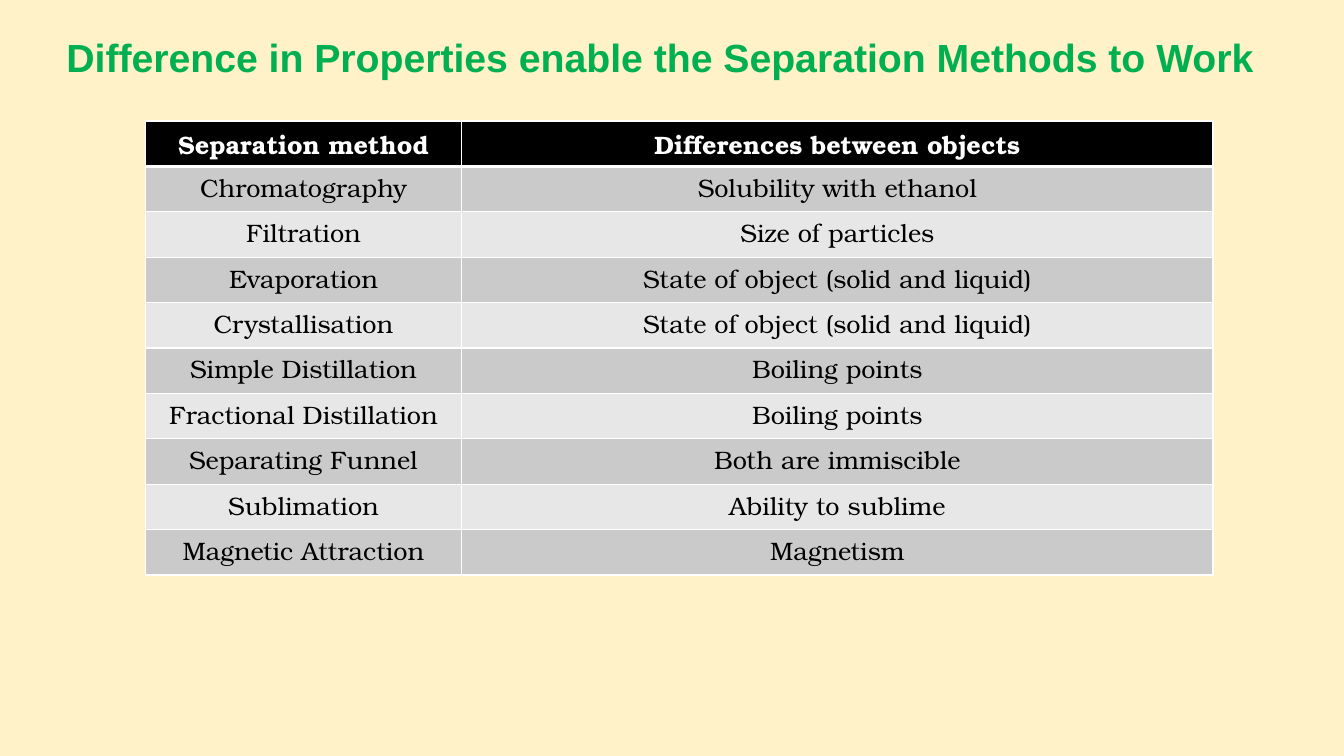
from dataclasses import dataclass

from lxml import etree
from pptx import Presentation
from pptx import util as u
from pptx.dml.color import RGBColor
from pptx.enum import text
from pptx.oxml import ns

SLIDE_WIDTH, SLIDE_HEIGHT = u.Inches(13.33), u.Inches(7.5)
CREAM, GREEN, BLACK, WHITE = "FFF1C8", "00B050", "000000", "FFFFFF"
BANDS = ("CACACA", "E7E7E7")
HEADINGS = ("Separation method", "Differences between objects")
COLUMN_SHARES = (0.2356, 0.5589)
ROW_SHARE = 0.0601


@dataclass(frozen=True)
class Separation:
    method: str
    difference: str


@dataclass(frozen=True)
class Style:
    font: str
    size: float
    color: str
    bold: bool = False


SEPARATIONS = (
    Separation("Chromatography", "Solubility with ethanol"),
    Separation("Filtration", "Size of particles"),
    Separation("Evaporation", "State of object (solid and liquid)"),
    Separation("Crystallisation", "State of object (solid and liquid)"),
    Separation("Simple Distillation", "Boiling points"),
    Separation("Fractional Distillation", "Boiling points"),
    Separation("Separating Funnel", "Both are immiscible"),
    Separation("Sublimation", "Ability to sublime"),
    Separation("Magnetic Attraction", "Magnetism"),
)
TITLE = Style("Arial", 28, GREEN, True)
HEADING = Style("TeX Gyre Bonum", 18, WHITE, True)
BODY = Style("TeX Gyre Bonum", 18, BLACK)


def color(value: str) -> RGBColor:
    return RGBColor.from_string(value)


def across(share: float) -> int:
    return round(SLIDE_WIDTH * share)


def down(share: float) -> int:
    return round(SLIDE_HEIGHT * share)


def write(frame, words: str, style: Style) -> None:
    para = frame.paragraphs[0]
    para.text = words
    para.alignment = text.PP_ALIGN.CENTER
    para.font.name = style.font
    para.font.size = u.Pt(style.size)
    para.font.bold = style.bold
    para.font.color.rgb = color(style.color)


def draw_border(cell, side: str, points: float) -> None:
    properties = cell._tc.get_or_add_tcPr()
    line = etree.Element(ns.qn(f"a:{side}"), w=str(u.Pt(points)))
    fill = etree.SubElement(line, ns.qn("a:solidFill"))
    etree.SubElement(fill, ns.qn("a:srgbClr"), val=WHITE)
    properties.append(line)


def draw_cell(cell, words: str, row: int) -> None:
    cell.margin_left = cell.margin_right = cell.margin_bottom = 0
    cell.margin_top = u.Inches(0.04)
    write(cell.text_frame, words, BODY if row else HEADING)
    cell.text_frame.paragraphs[0].space_before = u.Pt(3)
    draw_border(cell, "lnL", 1)
    draw_border(cell, "lnR", 1)
    draw_border(cell, "lnT", 3 if row == 1 else 1)
    draw_border(cell, "lnB", 1 if row else 3)
    cell.fill.solid()
    cell.fill.fore_color.rgb = color(BANDS[(row - 1) % 2] if row else BLACK)


def draw_table(page) -> None:
    rows = [HEADINGS] + [(item.method, item.difference) for item in SEPARATIONS]
    table = page.shapes.add_table(
        len(rows), len(HEADINGS), across(0.108), down(0.16),
        across(sum(COLUMN_SHARES)), down(ROW_SHARE * len(rows)),
    ).table
    for column, share in zip(table.columns, COLUMN_SHARES):
        column.width = across(share)
    for index, words in enumerate(rows):
        table.rows[index].height = down(ROW_SHARE)
        for column, entry in enumerate(words):
            draw_cell(table.cell(index, column), entry, index)


def draw_title(page) -> None:
    box = page.shapes.add_textbox(
        across(0.0338), down(0.0373), across(0.9145), down(0.076))
    box.text_frame.word_wrap = True
    box.text_frame.auto_size = text.MSO_AUTO_SIZE.SHAPE_TO_FIT_TEXT
    write(box.text_frame,
          "Difference in Properties enable the Separation Methods to Work", TITLE)


def main() -> None:
    deck = Presentation()
    deck.slide_width, deck.slide_height = SLIDE_WIDTH, SLIDE_HEIGHT
    page = deck.slides.add_slide(deck.slide_layouts[6])
    page.background.fill.solid()
    page.background.fill.fore_color.rgb = color(CREAM)
    draw_table(page)
    draw_title(page)
    deck.save("out.pptx")


if __name__ == "__main__":
    main()
